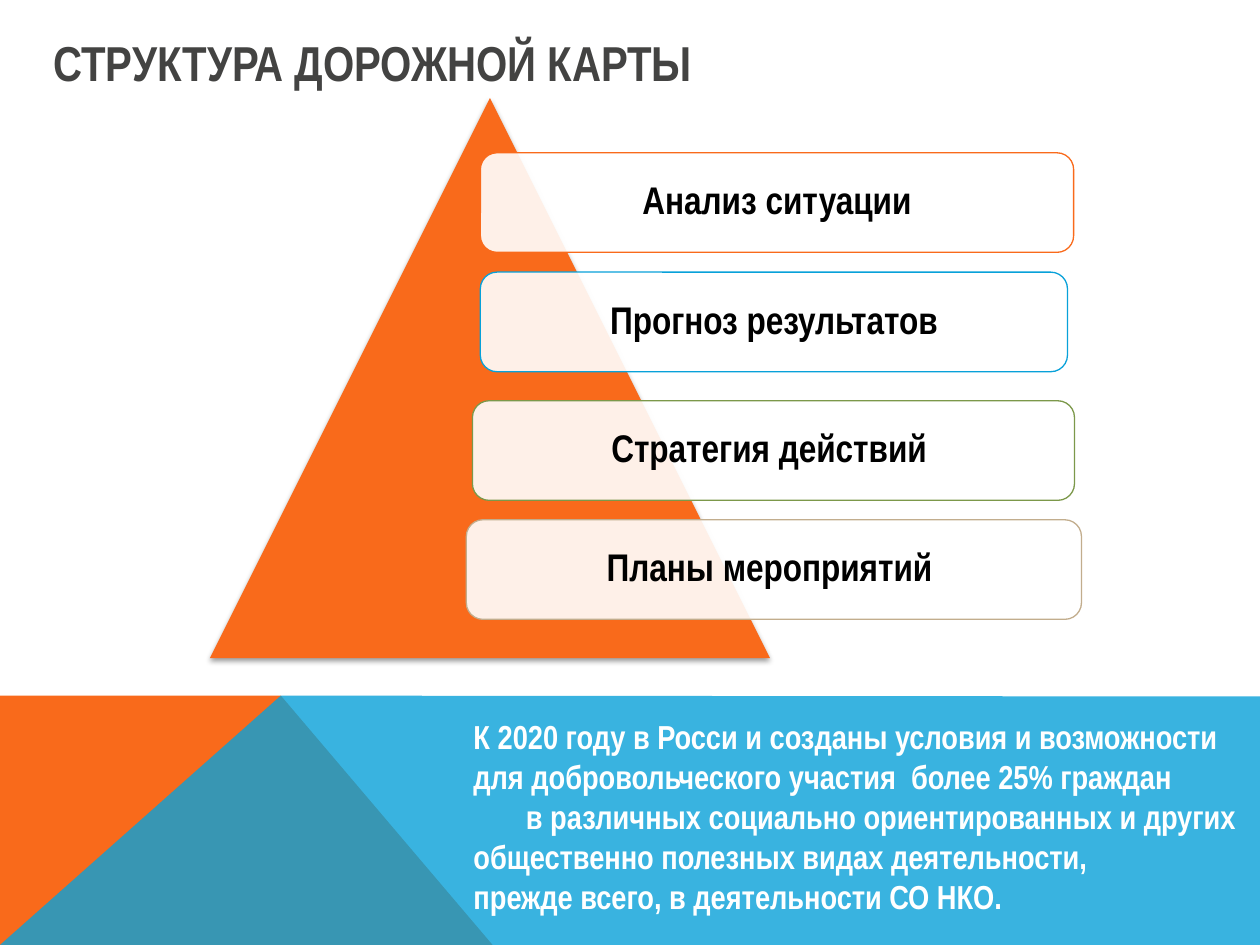
"""Build the road map slide: a pyramid with four stages over a coloured footer."""
from lxml.etree import SubElement
from pptx import Presentation
from pptx.dml.color import RGBColor
from pptx.enum.shapes import MSO_SHAPE
from pptx.enum.text import MSO_ANCHOR, MSO_AUTO_SIZE, PP_ALIGN
from pptx.oxml.ns import qn
from pptx.util import Pt

THEME = {
    "font": "Arial Narrow",
    "orange": "F96A1B", "blue": "08A1D9", "green": "7C984A", "tan": "C2AD8D",
    "dark": "434342", "black": "000000", "white": "FFFFFF",
    "title": 28, "stage": 22, "note": 19,
}


def paint(shape, color, alpha=100, line=None):
    shape.shadow.inherit = False
    shape.fill.solid()
    shape.fill.fore_color.rgb = RGBColor.from_string(THEME[color])
    if alpha < 100:
        tint = shape._element.spPr.find(qn("a:solidFill"))[0]
        SubElement(tint, qn("a:alpha"), val=str(alpha * 1000))
    if line:
        shape.line.color.rgb = RGBColor.from_string(THEME[line])
        shape.line.width = Pt(0.75)
    else:
        shape.line.fill.background()


def write(shape, lines, size, color, frame, para):
    text = shape.text_frame
    text.text = "\n".join(lines)
    for key, val in frame.items():
        setattr(text, key, val)
    for item in text.paragraphs:
        for key, val in para.items():
            setattr(item, key, val)
        font = {"name": THEME["font"], "size": Pt(THEME[size]), "bold": True}
        for key, val in font.items():
            setattr(item.runs[0].font, key, val)
        item.runs[0].font.color.rgb = RGBColor.from_string(THEME[color])


deck = Presentation()
deck.slide_width, deck.slide_height = Pt(720), Pt(540)
slide = deck.slides.add_slide(deck.slide_layouts[5])
shapes = slide.shapes

bands = [
    ("orange", 100, [(0, 540), (0, 397.5), (160.5, 397.5), (281.5, 540)]),
    ("blue", 80, [(0, 540), (160.5, 397.5), (720, 398), (720, 540)]),
]
for color, alpha, points in bands:
    first, *rest = [(Pt(x), Pt(y)) for x, y in points]
    path = shapes.build_freeform(*first)
    path.add_line_segments(rest, close=True)
    paint(path.convert_to_shape(), color, alpha)

top = {"word_wrap": True, "auto_size": MSO_AUTO_SIZE.NONE,
       "vertical_anchor": MSO_ANCHOR.TOP}
left = {"alignment": PP_ALIGN.LEFT}
title = shapes.title
place = {"left": 23.5, "top": 15, "width": 389, "height": 41}
for key, val in place.items():
    setattr(title, key, Pt(val))
write(title, ["СТРУКТУРА ДОРОЖНОЙ КАРТЫ"], "title", "dark",
      {**top, "word_wrap": False}, left)

peak = shapes.add_shape(MSO_SHAPE.ISOSCELES_TRIANGLE,
                        Pt(120), Pt(56), Pt(320), Pt(320))
paint(peak, "orange")
glow = SubElement(peak._element.spPr.find(qn("a:effectLst")), qn("a:outerShdw"),
                  blurRad=str(Pt(3.1)), dist=str(Pt(1.6)), dir="5400000",
                  rotWithShape="0")
shade = SubElement(glow, qn("a:srgbClr"), val=THEME["black"])
SubElement(shade, qn("a:alpha"), val="38000")

stages = [
    ("Анализ ситуации", "orange", 274.5, 87.3, 339),
    ("Прогноз результатов", "blue", 274.5, 155.5, 335.5),
    ("Стратегия действий ", "green", 270, 229, 344),
    ("Планы мероприятий ", "tan", 266.5, 297, 351.5),
]
middle = {"word_wrap": True, "vertical_anchor": MSO_ANCHOR.MIDDLE}
center = {"alignment": PP_ALIGN.CENTER, "line_spacing": 0.9}
for label, color, x, y, width in stages:
    card = shapes.add_shape(MSO_SHAPE.ROUNDED_RECTANGLE,
                            Pt(x), Pt(y), Pt(width), Pt(56.9))
    paint(card, "white", 90, color)
    write(card, [label], "stage", "black", middle, center)

note = shapes.add_textbox(Pt(263.5), Pt(406), Pt(456.5), Pt(122.5))
write(note, [
    "К 2020 году в Росси и созданы условия и возможности "
    "для добровольческого участия  более 25% граждан",
    "в различных социально ориентированных и других "
    "общественно полезных видах деятельности,",
    "прежде всего, в деятельности СО НКО.",
], "note", "white", top, left)
inset = note.text_frame.paragraphs[1]._p.get_or_add_pPr()
inset.set("indent", str(Pt(30)))

deck.save("out.pptx")
